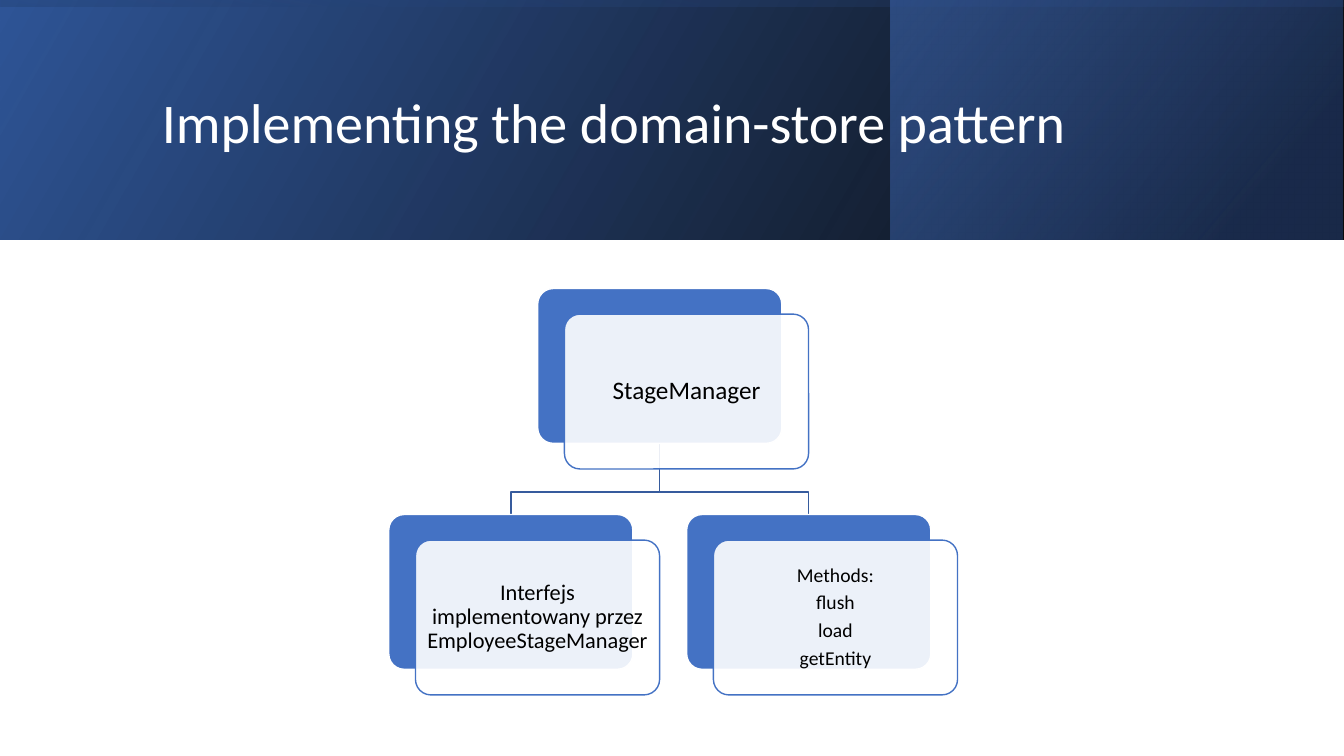
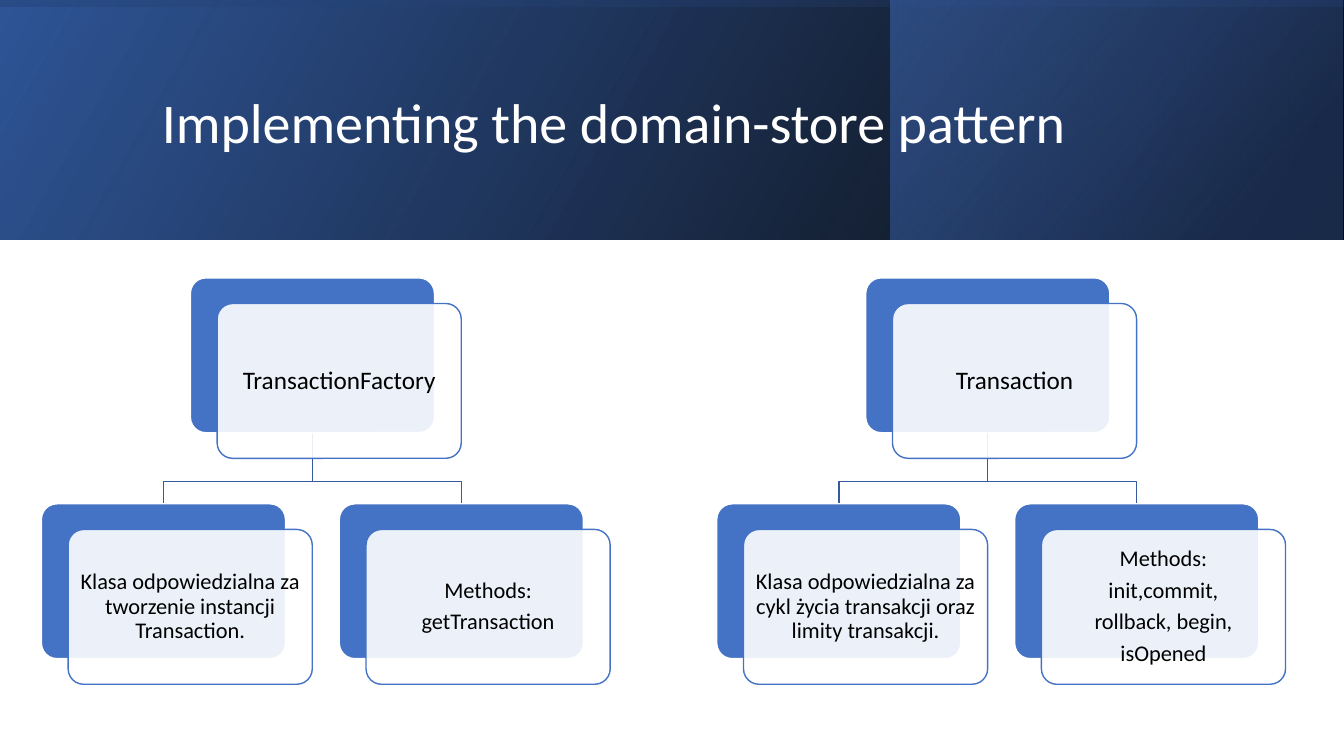
"""Build two slides of layered hierarchy diagrams under a gradient title band."""
from pptx import Presentation
from pptx.dml.color import RGBColor
from pptx.enum.shapes import MSO_SHAPE
from pptx.enum.text import MSO_ANCHOR, PP_ALIGN
from pptx.oxml.ns import qn
from pptx.util import Pt
from lxml.etree import SubElement

WHITE = RGBColor(0xFF, 0xFF, 0xFF)
BLACK = RGBColor(0x00, 0x00, 0x00)
BLUE = RGBColor(0x44, 0x72, 0xC4)
DARK_BLUE = RGBColor(0x2F, 0x55, 0x97)
NAVY = RGBColor(0x20, 0x38, 0x64)
LINK_BLUE = RGBColor(0x36, 0x5B, 0x9D)

SLIDE_WIDTH, SLIDE_HEIGHT = 960, 540
BAND_HEIGHT = 170.8
BAND_SHIFT = (SLIDE_WIDTH - BAND_HEIGHT) / 2
BANDS = [
    dict(box=(0, 0, SLIDE_WIDTH, BAND_HEIGHT), rotation=0, angle=330,
         stops=[(0, BLACK, 96), (1, DARK_BLUE, 100)]),
    dict(box=(636.2, 0, 323, BAND_HEIGHT), rotation=0, angle=320,
         stops=[(0.19, NAVY, 68), (1, BLUE, 48)]),
    dict(box=(BAND_SHIFT, -BAND_SHIFT, BAND_HEIGHT, SLIDE_WIDTH), rotation=270, angle=350,
         stops=[(0.23, DARK_BLUE, 16), (0.99, BLACK, 45)]),
]
TITLE = "Implementing the domain-store pattern"
TITLE_BOX = (108.5, 27.5, 765, 123.8)

BOX_WIDTH, BOX_HEIGHT = 174.4, 110.6
COLUMN_STEP, ROW_STEP = 212.8, 161.4
FRONT_X, FRONT_Y = 19.1, 18.3
LINK_BEND = 34.8
NODE_PLACES = [(0.5, 0), (0, 1), (1, 1)]

SLIDES = [
    [((277.7, 206.1), [
        (18, ["StageManager"]),
        (16, ["Interfejs implementowany przez EmployeeStageManager"]),
        (14, ["Methods:", "flush", "load", "getEntity"]),
    ])],
    [((29.6, 198.5), [
        (18, ["TransactionFactory"]),
        (16, ["Klasa odpowiedzialna za tworzenie instancji Transaction."]),
        (16, ["Methods:", "getTransaction"]),
    ]), ((512, 198.5), [
        (18, ["Transaction"]),
        (16, ["Klasa odpowiedzialna za cykl życia transakcji oraz limity transakcji."]),
        (16, ["Methods:", "init,commit,", "rollback, begin,", "isOpened"]),
    ])],
]


def set_opacity(shape, percents):
    """Set the opacity of the fill colours of a shape, in order."""
    for color, percent in zip(shape._element.spPr.iter(qn("a:srgbClr")), percents):
        SubElement(color, qn("a:alpha")).set("val", str(percent * 1000))


def write_text(shape, lines, size, color, alignment, inset):
    """Write one paragraph per line, centred vertically."""
    frame = shape.text_frame
    frame_format = dict(word_wrap=True, vertical_anchor=MSO_ANCHOR.MIDDLE,
                        margin_left=Pt(inset), margin_right=Pt(inset),
                        margin_top=Pt(inset), margin_bottom=Pt(inset))
    for name, value in frame_format.items():
        setattr(frame, name, value)
    frame.text = "\n".join(lines)
    for paragraph in frame.paragraphs:
        paragraph_format = dict(alignment=alignment, line_spacing=0.9,
                                space_after=Pt(size * 0.33))
        for name, value in paragraph_format.items():
            setattr(paragraph, name, value)
        for name, value in dict(name="Calibri", size=Pt(size)).items():
            setattr(paragraph.font, name, value)
        paragraph.font.color.rgb = color


presentation = Presentation()
presentation.slide_width, presentation.slide_height = Pt(SLIDE_WIDTH), Pt(SLIDE_HEIGHT)

for trees in SLIDES:
    slide = presentation.slides.add_slide(presentation.slide_layouts[6])
    shapes = slide.shapes

    for band in BANDS:
        shape = shapes.add_shape(MSO_SHAPE.RECTANGLE, *map(Pt, band["box"]))
        shape.rotation = band["rotation"]
        shape._element.spPr.xfrm.set("flipH", "1")
        shape.shadow.inherit = False
        shape.fill.gradient()
        shape.fill.gradient_angle = 360 - band["angle"]
        for stop, (position, color, percent) in zip(shape.fill.gradient_stops, band["stops"]):
            stop.position = position
            stop.color.rgb = color
        set_opacity(shape, [percent for position, color, percent in band["stops"]])
        shape.line.fill.background()

    title = shapes.add_textbox(*map(Pt, TITLE_BOX))
    write_text(title, [TITLE], 40, WHITE, PP_ALIGN.LEFT, 7.2)

    for (tree_left, tree_top), nodes in trees:
        root_x = tree_left + COLUMN_STEP / 2 + BOX_WIDTH / 2
        root_bottom = tree_top + BOX_HEIGHT
        bend_y = root_bottom + LINK_BEND
        for column in (1, 0):
            child_x = tree_left + column * COLUMN_STEP + BOX_WIDTH / 2
            corners = [(root_x, bend_y), (child_x, bend_y), (child_x, tree_top + ROW_STEP)]
            builder = shapes.build_freeform(Pt(root_x), Pt(root_bottom))
            builder.add_line_segments([(Pt(x), Pt(y)) for x, y in corners], close=False)
            link = builder.convert_to_shape()
            link.shadow.inherit = False
            link.fill.background()
            link.line.color.rgb = LINK_BLUE
            link.line.width = Pt(1)

        for (column, row), (size, lines) in zip(NODE_PLACES, nodes):
            left = tree_left + column * COLUMN_STEP
            top = tree_top + row * ROW_STEP
            layers = [(0, 0, BLUE, WHITE), (FRONT_X, FRONT_Y, WHITE, BLUE)]
            for shift_x, shift_y, fill_color, line_color in layers:
                shape = shapes.add_shape(MSO_SHAPE.ROUNDED_RECTANGLE, Pt(left + shift_x),
                                         Pt(top + shift_y), Pt(BOX_WIDTH), Pt(BOX_HEIGHT))
                shape.adjustments[0] = 0.1
                shape.shadow.inherit = False
                shape.fill.solid()
                shape.fill.fore_color.rgb = fill_color
                shape.line.color.rgb = line_color
                shape.line.width = Pt(1)
            set_opacity(shape, [90])
            write_text(shape, lines, size, BLACK, PP_ALIGN.CENTER, 4.5)

presentation.save("out.pptx")
